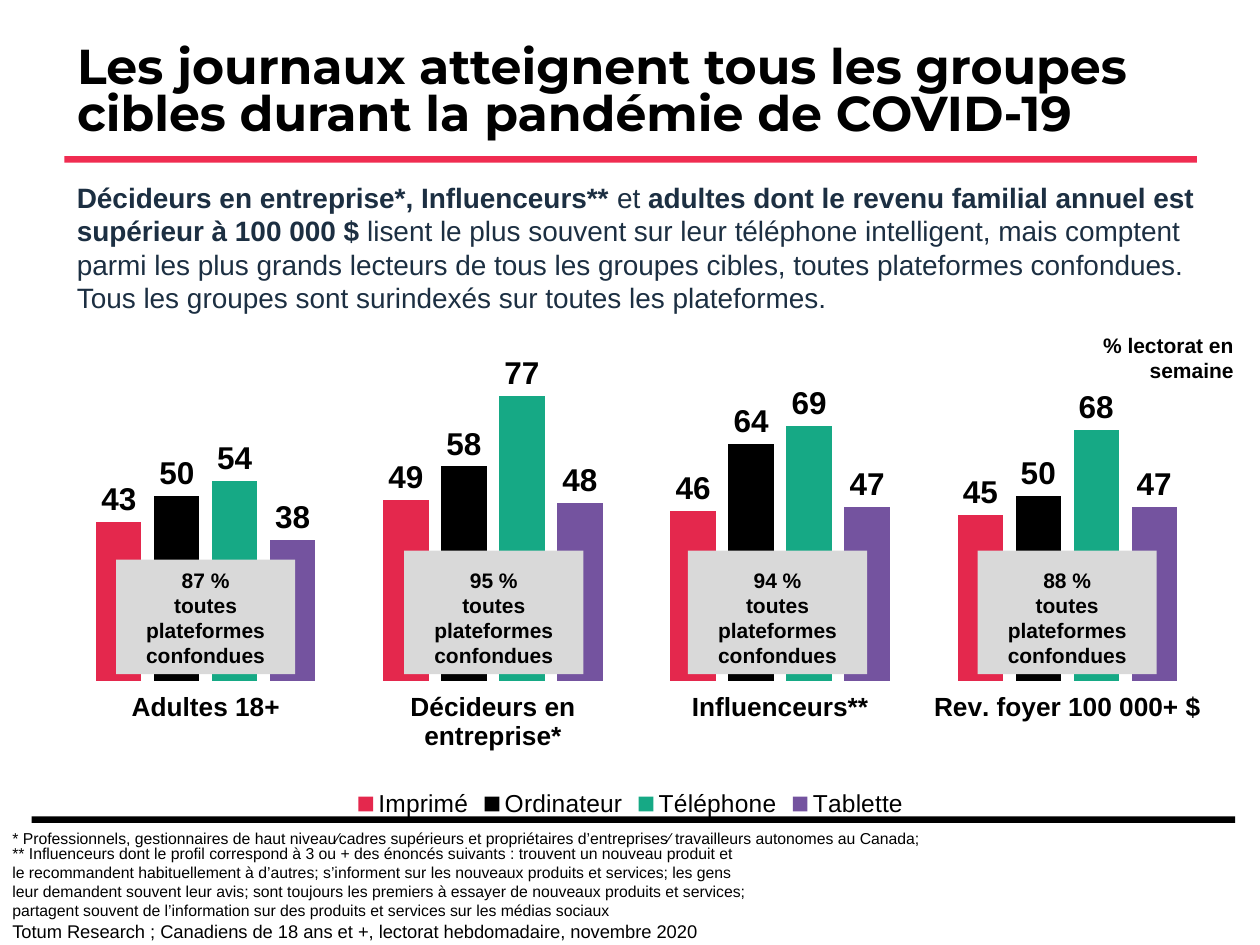
from pptx import Presentation
from pptx.chart.data import CategoryChartData
from pptx.dml.color import RGBColor
from pptx.enum.chart import XL_CHART_TYPE, XL_LABEL_POSITION, XL_LEGEND_POSITION, XL_TICK_MARK
from pptx.enum.shapes import MSO_SHAPE
from pptx.enum.text import MSO_ANCHOR, MSO_AUTO_SIZE, PP_ALIGN
from pptx.oxml import parse_xml
from pptx.oxml.ns import nsdecls
from pptx.util import Cm, Pt

INK = {
    "black": "000000", "red": "F02C51", "navy": "1C2F42", "grey": "D9D9D9",
    "print": "E4284D", "phone": "16A985", "tablet": "74539F",
}


class Deck:
    """Holds the style and the current slide."""

    font = "Arial"

    def __init__(self):
        self.prs = Presentation()
        self.prs.slide_width, self.prs.slide_height = Cm(25.4), Cm(19.05)
        self.slide = self.prs.slides.add_slide(self.prs.slide_layouts[5])

    def color(self, name):
        return RGBColor.from_string(INK[name])

    def style(self, font, size, bold=False, ink="black", face=None):
        font.name, font.size, font.bold = face or self.font, Pt(size), bold
        font.color.rgb = self.color(ink)

    def title(self, box, text):
        shape = self.slide.shapes.title
        shape.left, shape.top, shape.width, shape.height = map(Cm, box)
        frame = shape.text_frame
        frame.text, frame.word_wrap = text, True
        frame.auto_size = MSO_AUTO_SIZE.NONE
        frame.vertical_anchor = MSO_ANCHOR.MIDDLE
        para = frame.paragraphs[0]
        para.alignment, para.line_spacing = PP_ALIGN.LEFT, 0.8
        self.style(para.font, 28, True, face="Montserrat")

    def rect(self, box, ink):
        shape = self.slide.shapes.add_shape(MSO_SHAPE.RECTANGLE, *map(Cm, box))
        shape.shadow.inherit = False
        shape.fill.solid()
        shape.fill.fore_color.rgb = self.color(ink)
        shape.line.fill.background()
        return shape

    def fill(self, frame, lines, bold=False, ink="black", align=PP_ALIGN.LEFT):
        """Each line is a size and a list of (text, bold) runs or a string."""
        frame.word_wrap = True
        for i, (size, runs) in enumerate(lines):
            para = frame.add_paragraph() if i else frame.paragraphs[0]
            para.alignment = align
            self.style(para.font, size, bold, ink)
            if isinstance(runs, str):
                para.add_run().text = runs
                continue
            for text, heavy in runs:
                run = para.add_run()
                run.text, run.font.bold = text, heavy

    def text(self, box, lines, **look):
        shape = self.slide.shapes.add_textbox(*map(Cm, box))
        self.fill(shape.text_frame, lines, **look)

    def badge(self, box, share):
        frame = self.rect(box, "grey").text_frame
        frame.vertical_anchor = MSO_ANCHOR.BOTTOM
        lines = [(12, share), (12, "toutes plateformes confondues")]
        self.fill(frame, lines, bold=True, align=PP_ALIGN.CENTER)

    def chart(self, box, cats, rows):
        data = CategoryChartData()
        data.categories = cats
        for name, _, vals in rows:
            data.add_series(name, vals)
        chart = self.slide.shapes.add_chart(
            XL_CHART_TYPE.COLUMN_CLUSTERED, *map(Cm, box), data).chart
        self.style(chart.font, 18)
        chart.has_title = False

        # Legend and axes
        chart.has_legend = True
        chart.legend.position = XL_LEGEND_POSITION.BOTTOM
        chart.legend.include_in_layout = False
        self.style(chart.legend.font, 14)
        axis = chart.category_axis
        axis.major_tick_mark = XL_TICK_MARK.OUTSIDE
        axis.format.line.fill.background()
        self.style(axis.tick_labels.font, 15, True)
        axis = chart.value_axis
        axis.minimum_scale, axis.maximum_scale = 0, 90
        axis.has_major_gridlines = axis.visible = False

        # Columns and labels
        plot = chart.plots[0]
        plot.gap_width, plot.overlap = 150, -28
        plot.vary_by_categories = False
        for series, (_, ink, _) in zip(plot.series, rows):
            series.format.fill.solid()
            series.format.fill.fore_color.rgb = self.color(ink)
            labels = series.data_labels
            labels.show_value = True
            labels.position = XL_LABEL_POSITION.OUTSIDE_END
            self.style(labels.font, 18, True)

        # Fixed plot area
        area = chart._chartSpace.chart.plotArea
        for old in area.findall("{*}layout"):
            area.remove(old)
        spots = {"x": 0.01, "y": 0.169, "w": 0.99, "h": 0.582}
        modes = "".join(f'<c:{k}Mode val="edge"/>' for k in "xy")
        sizes = "".join(f'<c:{k} val="{v}"/>' for k, v in spots.items())
        area.insert(0, parse_xml(
            f'<c:layout {nsdecls("c")}><c:manualLayout><c:layoutTarget val="inner"/>'
            f'{modes}{sizes}</c:manualLayout></c:layout>'))


def main():
    deck = Deck()

    # Rules and title
    deck.rect((0.64, 16.46, 24.26, 0.13), "black")
    deck.rect((1.3, 3.15, 22.83, 0.13), "red")
    deck.title((1.3, 0.05, 23.09, 3.68),
               "Les journaux atteignent tous les groupes cibles durant la pandémie de COVID-19")

    # Readership by group
    deck.chart(
        (1.02, 5.08, 23.39, 11.51),
        ["Adultes 18+", "Décideurs en entreprise*", "Influenceurs**", "Rev. foyer 100 000+ $"],
        [("Imprimé", "print", (43, 49, 46, 45)),
         ("Ordinateur", "black", (50, 58, 64, 50)),
         ("Téléphone", "phone", (54, 77, 69, 68)),
         ("Tablette", "tablet", (38, 48, 47, 47))])

    # Introduction
    deck.text((1.3, 3.51, 23.09, 3), [(16, [
        ("Décideurs en entreprise*, Influenceurs** ", True),
        ("et", False),
        (" adultes dont le revenu familial annuel est supérieur à 100 000 $ ", True),
        ("lisent le plus souvent sur leur téléphone intelligent, mais comptent parmi "
         "les plus grands lecteurs de tous les groupes cibles, toutes plateformes "
         "confondues. Tous les groupes sont surindexés sur toutes les plateformes.", False),
    ])], ink="navy")

    # Totals, all standing on one line
    base = 13.59
    for left, high, share in [(2.34, 2.31, "87 %"), (8.15, 2.49, "95 %"),
                              (13.87, 2.49, "94 %"), (19.71, 2.49, "88 %")]:
        deck.badge((left, base - high, 3.61, high), share)

    # Unit and footnotes
    deck.text((21.69, 6.58, 3.43, 1.27), [(12, "% lectorat en semaine")],
              bold=True, align=PP_ALIGN.RIGHT)
    deck.text((0, 16.59, 19.18, 0.63), [(
        9, "* Professionnels, gestionnaires de haut niveau∕cadres supérieurs et "
           "propriétaires d’entreprises∕ travailleurs autonomes au Canada;")])
    deck.text((0, 16.89, 15.29, 2.24), [
        (9, "** Influenceurs dont le profil correspond à 3 ou + des énoncés suivants : "
            "trouvent un nouveau produit et le recommandent habituellement à d’autres; "
            "s’informent sur les nouveaux produits et services; les gens leur demandent "
            "souvent leur avis; sont toujours les premiers à essayer de nouveaux produits "
            "et services; partagent souvent de l’information sur des produits et services "
            "sur les médias sociaux"),
        (10.5, "Totum Research ; Canadiens de 18 ans et +, lectorat hebdomadaire, novembre 2020")])

    deck.prs.save("out.pptx")


if __name__ == "__main__":
    main()
